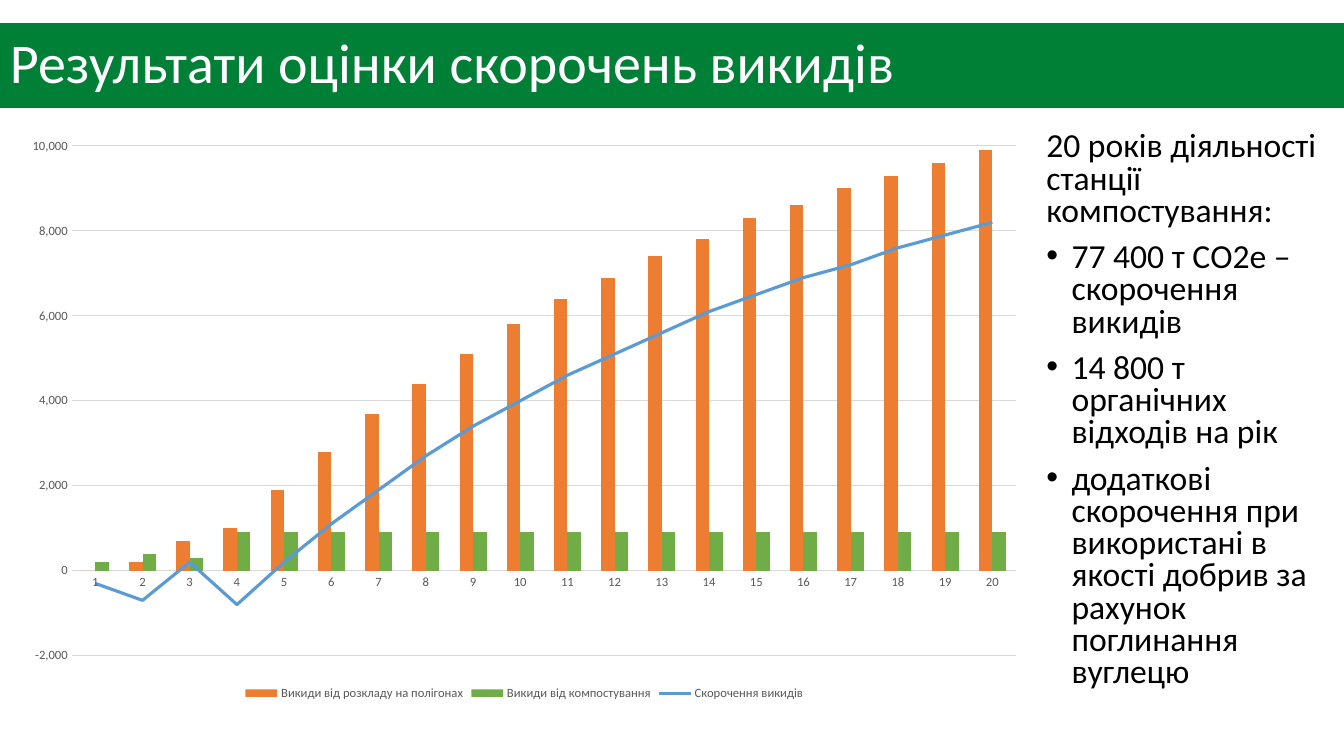
from pptx import Presentation
from pptx.chart.data import CategoryChartData
from pptx.dml.color import RGBColor
from pptx.enum.chart import XL_CHART_TYPE as ChartType
from pptx.enum.chart import XL_LEGEND_POSITION as LegendPosition
from pptx.enum.chart import XL_MARKER_STYLE as MarkerStyle
from pptx.enum.chart import XL_TICK_MARK as TickMark
from pptx.enum.shapes import MSO_SHAPE as Shape
from pptx.enum.text import MSO_ANCHOR as Anchor
from pptx.enum.text import PP_ALIGN as Align
from pptx.oxml import parse_xml
from pptx.oxml.ns import nsdecls, qn
from pptx.util import Inches, Pt

FONT = "Calibri"
COLORS = {
    "banner": "008037",
    "title": "FFFFFF",
    "body": "000000",
    "labels": "595959",
    "grid": "D9D9D9",
    "landfill": "ED7D31",
    "compost": "70AD47",
    "reduction": "5B9BD5",
}
TITLE = "Результати оцінки скорочень викидів"
INTRO = "20 років діяльності станції компостування:"
FINDINGS = [
    "77 400 т СО2е – скорочення викидів",
    "14 800 т органічних відходів на рік",
    "додаткові скорочення при використані в якості добрив за рахунок поглинання вуглецю",
]
LANDFILL = [0, 200, 700, 1000, 1900, 2800, 3700, 4400, 5100, 5800,
            6400, 6900, 7400, 7800, 8300, 8600, 9000, 9300, 9600, 9900]
COMPOST = [200, 400, 300] + [900] * 17
REDUCTION = [-300, -700, 200, -800, 200, 1100, 1900, 2700, 3400, 4000,
             4600, 5100, 5600, 6100, 6500, 6900, 7200, 7600, 7900, 8200]


def color(name):
    """Return the named colour."""
    return RGBColor.from_string(COLORS[name])


def style_font(font, size, name):
    """Set typeface, size and colour of a font."""
    font.name = FONT
    font.size = Pt(size)
    font.color.rgb = color(name)


def style_line(line, name, width):
    """Set colour and width of a line."""
    line.color.rgb = color(name)
    line.width = Pt(width)


def add_banner(page):
    """Add the full-width title bar."""
    banner = page.shapes.add_shape(
        Shape.RECTANGLE, Inches(0), Inches(0.23), Inches(13.33), Inches(0.84))
    banner.shadow.inherit = False
    banner.fill.solid()
    banner.fill.fore_color.rgb = color("banner")
    banner.line.fill.background()
    banner.text_frame.text = TITLE
    banner.text_frame.vertical_anchor = Anchor.MIDDLE
    para = banner.text_frame.paragraphs[0]
    para.alignment = Align.LEFT
    para.line_spacing = 0.9
    style_font(para.runs[0].font, 40, "title")


def add_bullet(para):
    """Give a paragraph a hanging round bullet."""
    properties = para._p.get_or_add_pPr()
    properties.set("marL", str(Inches(0.25)))
    properties.set("indent", str(-Inches(0.25)))
    for tag in ('a:buFont %s typeface="Arial"', 'a:buChar %s char="•"'):
        properties.append(parse_xml(f"<{tag % nsdecls('a')}/>"))


def add_findings(page):
    """Add the introduction and its bulleted findings."""
    box = page.shapes.add_textbox(
        Inches(10.28), Inches(1.26), Inches(2.93), Inches(6.19))
    frame = box.text_frame
    frame.word_wrap = True
    frame.text = "\n".join([INTRO] + FINDINGS)
    for index, para in enumerate(frame.paragraphs):
        para.line_spacing = 0.8
        para.space_before = Pt(10)
        style_font(para.runs[0].font, 24, "body")
        if index:
            add_bullet(para)


def move_last_series_to_line(chart):
    """Turn the last column series into a line on the same axes."""
    bars = chart.plots[0]._element
    series = bars.findall(qn("c:ser"))[-1]
    for flag in series.findall(qn("c:invertIfNegative")):
        series.remove(flag)
    axes = "".join(f'<c:axId val="{axis.get("val")}"/>'
                   for axis in bars.findall(qn("c:axId")))
    lines = parse_xml(
        f'<c:lineChart {nsdecls("c")}><c:grouping val="standard"/>'
        f'<c:varyColors val="0"/><c:marker val="1"/>{axes}</c:lineChart>')
    lines.insert(2, series)
    bars.addnext(lines)


def style_axes(chart):
    """Format both axes and the gridlines."""
    for axis in (chart.category_axis, chart.value_axis):
        axis.major_tick_mark = axis.minor_tick_mark = TickMark.NONE
        style_font(axis.tick_labels.font, 9, "labels")
    chart.category_axis.has_major_gridlines = False
    style_line(chart.category_axis.format.line, "grid", 0.75)
    values = chart.value_axis
    values.minimum_scale, values.maximum_scale = -2000, 10000
    values.major_unit = 2000
    values.tick_labels.number_format = "#,##0"
    values.tick_labels.number_format_is_linked = False
    values.format.line.fill.background()
    values.has_major_gridlines = True
    style_line(values.major_gridlines.format.line, "grid", 0.75)


def add_emissions_chart(page):
    """Add the columns of emissions with the reduction line."""
    data = CategoryChartData(number_format="#,##0")
    data.categories = [str(year) for year in range(1, 21)]
    data.add_series("Викиди від розкладу на полігонах", LANDFILL)
    data.add_series("Викиди від компостування", COMPOST)
    data.add_series("Скорочення викидів", REDUCTION)
    chart = page.shapes.add_chart(
        ChartType.COLUMN_CLUSTERED, Inches(0.12), Inches(1.26),
        Inches(10.16), Inches(5.73), data).chart
    style_font(chart.font, 10, "body")
    chart.has_title = False
    move_last_series_to_line(chart)
    columns, lines = chart.plots
    columns.gap_width, columns.overlap = 150, 0
    columns.vary_by_categories = False
    for series, name in zip(columns.series, ("landfill", "compost")):
        series.invert_if_negative = False
        series.format.fill.solid()
        series.format.fill.fore_color.rgb = color(name)
    reduction = lines.series[0]
    reduction.smooth = False
    reduction.marker.style = MarkerStyle.NONE
    style_line(reduction.format.line, "reduction", 2.25)
    style_axes(chart)
    chart.has_legend = True
    chart.legend.position = LegendPosition.BOTTOM
    chart.legend.include_in_layout = False
    style_font(chart.legend.font, 9, "labels")


def main():
    """Build and save the slide."""
    deck = Presentation()
    deck.slide_width, deck.slide_height = Inches(13.33), Inches(7.5)
    page = deck.slides.add_slide(deck.slide_layouts[6])
    add_banner(page)
    add_findings(page)
    add_emissions_chart(page)
    deck.save("out.pptx")


if __name__ == "__main__":
    main()
